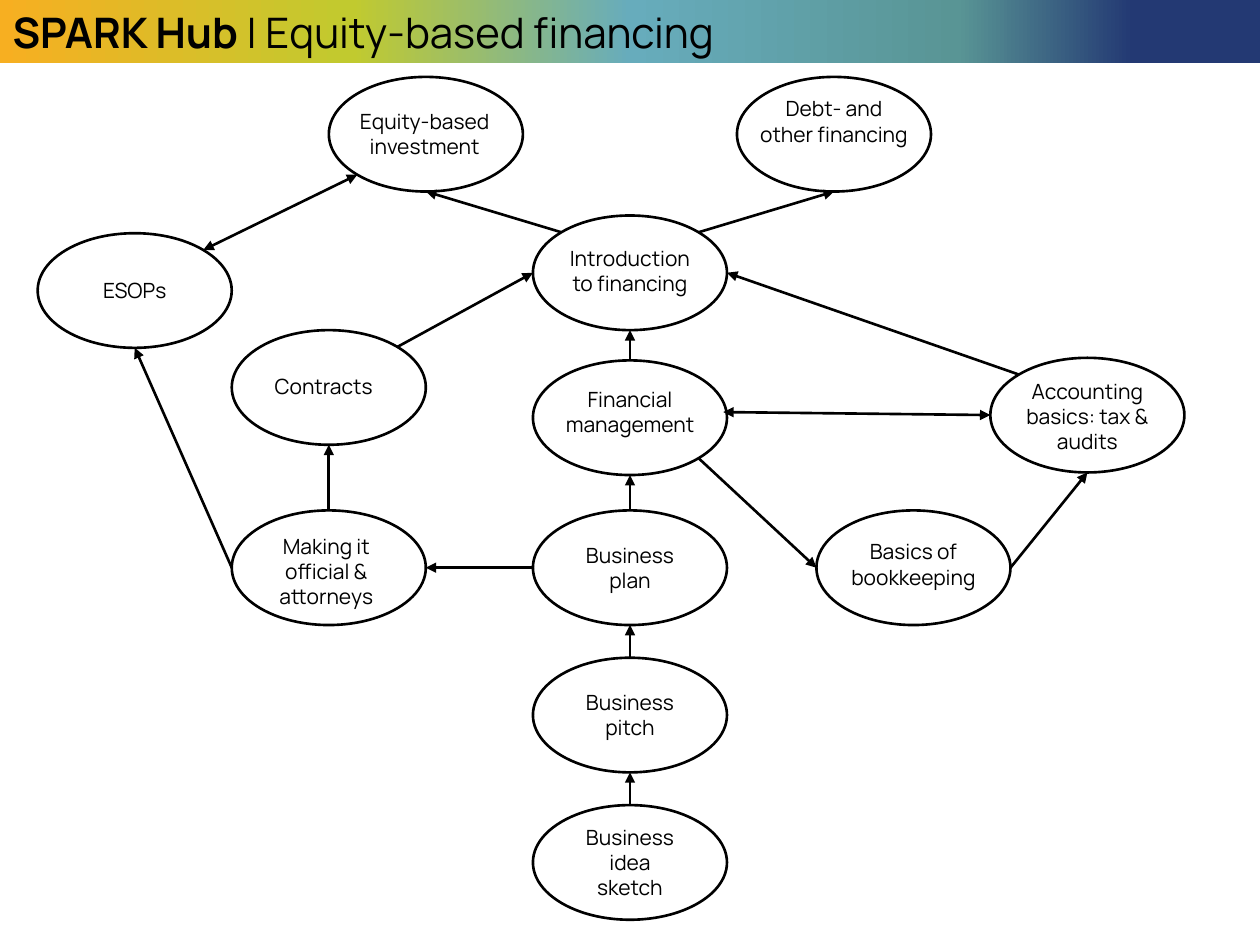
import copy
import math

import pptx
import pptx.dml.color
import pptx.enum.shapes
import pptx.enum.text
import pptx.oxml.ns
import pptx.util
from lxml import etree

Pt = pptx.util.Pt
RGBColor = pptx.dml.color.RGBColor
qn = pptx.oxml.ns.qn

FONT = "Manrope"
BLACK = RGBColor(0x00, 0x00, 0x00)
BANNER = [
    (0, RGBColor(0xF7, 0xAF, 0x21)),
    (28, RGBColor(0xC1, 0xCA, 0x2F)),
    (50, RGBColor(0x67, 0xAC, 0xBC)),
    (76, RGBColor(0x59, 0x95, 0x95)),
    (90, RGBColor(0x23, 0x39, 0x73)),
]
TITLE = [("SPARK Hub ", True), ("| Equity-based financing", False)]

OVAL_WIDTH, OVAL_HEIGHT = 110.9, 65.5
LINE_HEIGHT, LABEL_PADDING = 14.5, 7.3
MIDDLE, LEFT_COLUMN = 360, 187.9
TOP_ROW, PLAN_ROW = 76.7, 324.4

# name: (text, centre, label offset, label width, label lines)
TOPICS = {
    "idea": ("Business idea sketch", (MIDDLE, 492.8), (0, 0), 71.3, 3),
    "pitch": ("Business pitch", (MIDDLE, 408.6), (0, 0), 71.3, 2),
    "plan": ("Business plan", (MIDDLE, PLAN_ROW), (0, 0), 71.3, 2),
    "intro": ("Introduction to financing", (MIDDLE, 155.9), (0, -1), 91.4, 2),
    "bookkeeping": ("Basics of bookkeeping", (522, PLAN_ROW), (0, -1.8), 95.8, 2),
    "official": ("Making it official & attorneys", (LEFT_COLUMN, PLAN_ROW), (-1.4, 2.2), 79.2, 3),
    "accounting": ("Accounting basics: tax & audits", (621.4, 237.2), (0, 0.7), 91.4, 3),
    "contracts": ("Contracts", (LEFT_COLUMN, 221.4), (-2.9, -0.4), 90.7, 1),
    "equity": ("Equity-based\ninvestment", (243.4, TOP_ROW), (-0.7, 0), 100.8, 2),
    "debt": ("Debt- and other financing", (476.6, TOP_ROW), (0, 0), 100.8, 3),
    "management": ("Financial management", (MIDDLE, 238.7), (0, -3.2), 106.6, 2),
    "esops": ("ESOPs", (77, 166), (0, 0), 90.7, 1),
}

ANGLES = {
    "right": 0, "lower right": 45, "bottom": 90, "lower left": 135,
    "left": 180, "upper left": 225, "top": 270, "upper right": 315,
}
ARROWS = [
    ("idea", "top", "pitch", "bottom"),
    ("pitch", "top", "plan", "bottom"),
    ("plan", "top", "management", "bottom"),
    ("management", "top", "intro", "bottom"),
    ("intro", "upper right", "debt", "bottom"),
    ("intro", "upper left", "equity", "bottom"),
    ("plan", "left", "official", "right"),
    ("management", "lower right", "bookkeeping", "left"),
    ("bookkeeping", "right", "accounting", "bottom"),
    ("official", "top", "contracts", "bottom"),
    ("contracts", "upper right", "intro", "left"),
    ("accounting", "upper left", "intro", "right"),
    ("official", "left", "esops", "bottom"),
]
TWO_WAY_ARROWS = [
    ("equity", "lower left", "esops", "upper right"),
    ("accounting", "left", "management", "right"),
]


def format_span(span, size, bold=False):
    span.font.name = FONT
    span.font.size = Pt(size)
    span.font.bold = bold
    span.font.color.rgb = BLACK


def place(shape, left, top, width, height):
    shape.left, shape.top = Pt(left), Pt(top)
    shape.width, shape.height = Pt(width), Pt(height)


def fill_banner(shape):
    shape.fill.gradient()
    shape.fill.gradient_angle = 0
    stops = shape.element.spPr.find(".//" + qn("a:gsLst"))
    pattern = copy.deepcopy(stops[0])
    for child in list(pattern):
        pattern.remove(child)
    for stop in list(stops):
        stops.remove(stop)
    for position, color in BANNER:
        stop = copy.deepcopy(pattern)
        stop.set("pos", str(position * 1000))
        etree.SubElement(stop, qn("a:srgbClr")).set("val", str(color))
        stops.append(stop)


def add_title(page):
    title = page.shapes.title
    place(title, 0, 0, 720, 36)
    fill_banner(title)
    frame = title.text_frame
    frame.auto_size = pptx.enum.text.MSO_AUTO_SIZE.NONE
    frame.vertical_anchor = pptx.enum.text.MSO_ANCHOR.MIDDLE
    paragraph = frame.paragraphs[0]
    paragraph.alignment = pptx.enum.text.PP_ALIGN.LEFT
    for text, bold in TITLE:
        span = paragraph.add_run()
        span.text = text
        format_span(span, 24, bold)


def add_topic(page, text, centre, offset, width, lines):
    x, y = centre
    oval = page.shapes.add_shape(
        pptx.enum.shapes.MSO_SHAPE.OVAL, Pt(x - OVAL_WIDTH / 2),
        Pt(y - OVAL_HEIGHT / 2), Pt(OVAL_WIDTH), Pt(OVAL_HEIGHT))
    oval.shadow.inherit = False
    oval.fill.background()
    oval.line.color.rgb = BLACK
    oval.line.width = Pt(1.5)

    height = LABEL_PADDING * 2 + LINE_HEIGHT * lines - LABEL_PADDING
    label = page.shapes.add_textbox(
        Pt(x + offset[0] - width / 2), Pt(y + offset[1] - height / 2),
        Pt(width), Pt(height))
    label.text_frame.word_wrap = True
    label.text_frame.text = text
    for paragraph in label.text_frame.paragraphs:
        paragraph.alignment = pptx.enum.text.PP_ALIGN.CENTER
        format_span(paragraph.runs[0], 12)
    return label


def edge_point(topic, side):
    x, y = TOPICS[topic][1]
    angle = math.radians(ANGLES[side])
    return (Pt(x + OVAL_WIDTH / 2 * math.cos(angle)),
            Pt(y + OVAL_HEIGHT / 2 * math.sin(angle)))


def add_arrow(page, start, start_side, end, end_side, ends):
    arrow = page.shapes.add_connector(
        pptx.enum.shapes.MSO_CONNECTOR.STRAIGHT,
        *edge_point(start, start_side), *edge_point(end, end_side))
    arrow.line.color.rgb = BLACK
    arrow.line.width = Pt(1.5)
    line = arrow.line._get_or_add_ln()
    for tag in ends:
        etree.SubElement(line, qn(tag)).set("type", "triangle")
    etree.SubElement(arrow.element.spPr, qn("a:effectLst"))
    return arrow


def main():
    deck = pptx.Presentation()
    deck.slide_width, deck.slide_height = Pt(720), Pt(540)
    page = deck.slides.add_slide(deck.slide_layouts[5])
    add_title(page)
    labels = {name: add_topic(page, *topic) for name, topic in TOPICS.items()}
    for arrow in ARROWS:
        add_arrow(page, *arrow, ["a:tailEnd"])
    for arrow in TWO_WAY_ARROWS:
        connector = add_arrow(page, *arrow, ["a:headEnd", "a:tailEnd"])
    connector.end_connect(labels["management"], 3)
    deck.save("out.pptx")


if __name__ == "__main__":
    main()
